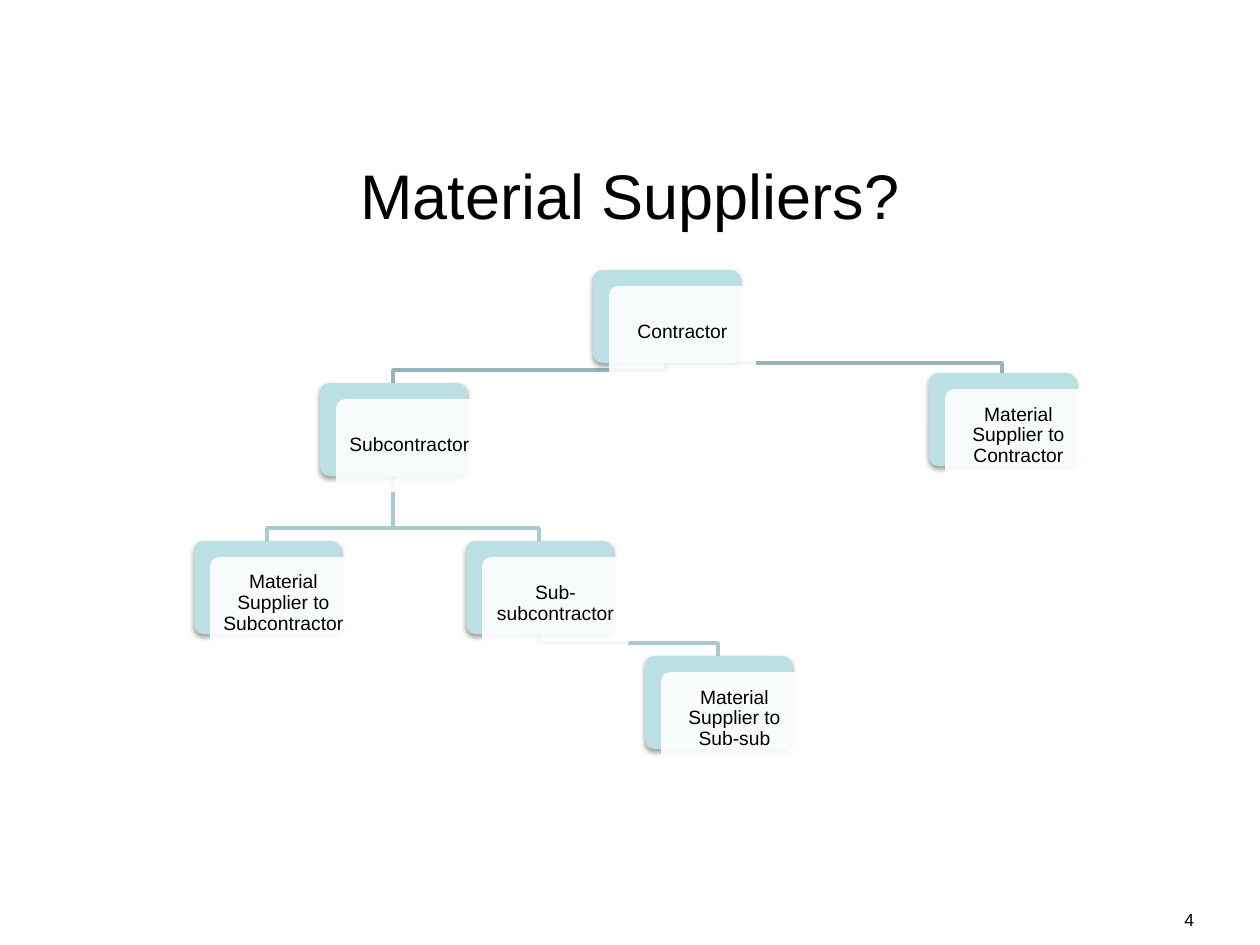
from lxml.etree import SubElement
from pptx import Presentation
from pptx.dml.color import RGBColor
from pptx.enum.shapes import MSO_SHAPE
from pptx.enum.text import MSO_ANCHOR, PP_ALIGN
from pptx.oxml.ns import qn
from pptx.util import Pt

PX = 914400 / 126
COLORS = {
    "text": "000000",
    "box": "BBE0E3",
    "card": "FFFFFF",
    "shadow": "000000",
    "top line": "96B3B6",
    "line": "AACBCE",
}
BOX_W, BOX_H = 147, 93
CARD_SHIFT = 16
BEND = 13  # height of the last leg of a line, above the child box

# name: (left, top, text, parent)
NODES = {
    "contractor": (593, 270, "Contractor", None),
    "sub": (320, 383, "Subcontractor", "contractor"),
    "sub supplier": (194, 541, "Material Supplier to Subcontractor", "sub"),
    "subsub": (466, 541, "Sub-subcontractor", "sub"),
    "subsub supplier": (645, 656, "Material Supplier to Sub-sub", "subsub"),
    "supplier": (929, 373, "Material Supplier to Contractor", "contractor"),
}


def px(*values):
    return [round(v * PX) for v in values]


def write(sp, text, size=11, align=PP_ALIGN.CENTER, anchor=MSO_ANCHOR.MIDDLE,
          inset=6, spacing=None):
    tf = sp.text_frame
    tf.word_wrap = True
    tf.vertical_anchor = anchor
    tf.margin_left, tf.margin_top, tf.margin_right, tf.margin_bottom = px(inset, 6, inset, 6)
    p = tf.paragraphs[0]
    p.alignment = align
    p.line_spacing = spacing
    r = p.add_run()
    r.text = text
    r.font.name = "Arial"
    r.font.size = Pt(size)
    r.font.color.rgb = RGBColor.from_string(COLORS["text"])


prs = Presentation()
prs.slide_width, prs.slide_height = px(1260, 945)
s = prs.slides.add_slide(prs.slide_layouts[6])

write(s.shapes.add_textbox(*px(945, 903, 262, 63)), "4", size=10,
      align=PP_ALIGN.RIGHT, anchor=MSO_ANCHOR.TOP, inset=13)
write(s.shapes.add_textbox(*px(63, 116, 1134, 157)), "Material Suppliers?",
      size=36, inset=13)

# Lines run from the bottom of the parent to the top of the child
for left, top, text, parent in reversed(NODES.values()):
    if parent is None:
        continue
    start_x = NODES[parent][0] + BOX_W // 2
    start_y = NODES[parent][1] + BOX_H
    end_x = left + BOX_W // 2
    bend_y = max(start_y, top - BEND)
    outline = s.shapes.build_freeform(start_x, start_y, scale=PX)
    outline.add_line_segments(
        [(start_x, bend_y), (end_x, bend_y), (end_x, top)], close=False)
    sp = outline.convert_to_shape()
    sp.shadow.inherit = False
    sp.fill.background()
    sp.line.width = Pt(2)
    color = "top line" if parent == "contractor" else "line"
    sp.line.color.rgb = RGBColor.from_string(COLORS[color])

# Each node is a tinted box with a translucent text card shifted over it
for left, top, text, parent in NODES.values():
    for layer, shift in (("box", 0), ("card", CARD_SHIFT)):
        sp = s.shapes.add_shape(MSO_SHAPE.ROUNDED_RECTANGLE,
                                *px(left + shift, top + shift, BOX_W, BOX_H))
        sp.adjustments[0] = 0.1
        sp.shadow.inherit = False
        sp.fill.solid()
        sp.fill.fore_color.rgb = RGBColor.from_string(COLORS[layer])
        sp.line.fill.background()
        spPr = sp.element.spPr
        if layer == "box":
            shadow = SubElement(spPr.find(qn("a:effectLst")), qn("a:outerShdw"),
                                blurRad=str(Pt(3.1)), dist=str(Pt(1.6)),
                                dir="5400000", rotWithShape="0")
            clr = SubElement(shadow, qn("a:srgbClr"), val=COLORS["shadow"])
            SubElement(clr, qn("a:alpha"), val="38000")
        else:
            clr = spPr.find(qn("a:solidFill")).find(qn("a:srgbClr"))
            SubElement(clr, qn("a:alpha"), val="90000")
            write(sp, text, spacing=0.9)

prs.save("out.pptx")
